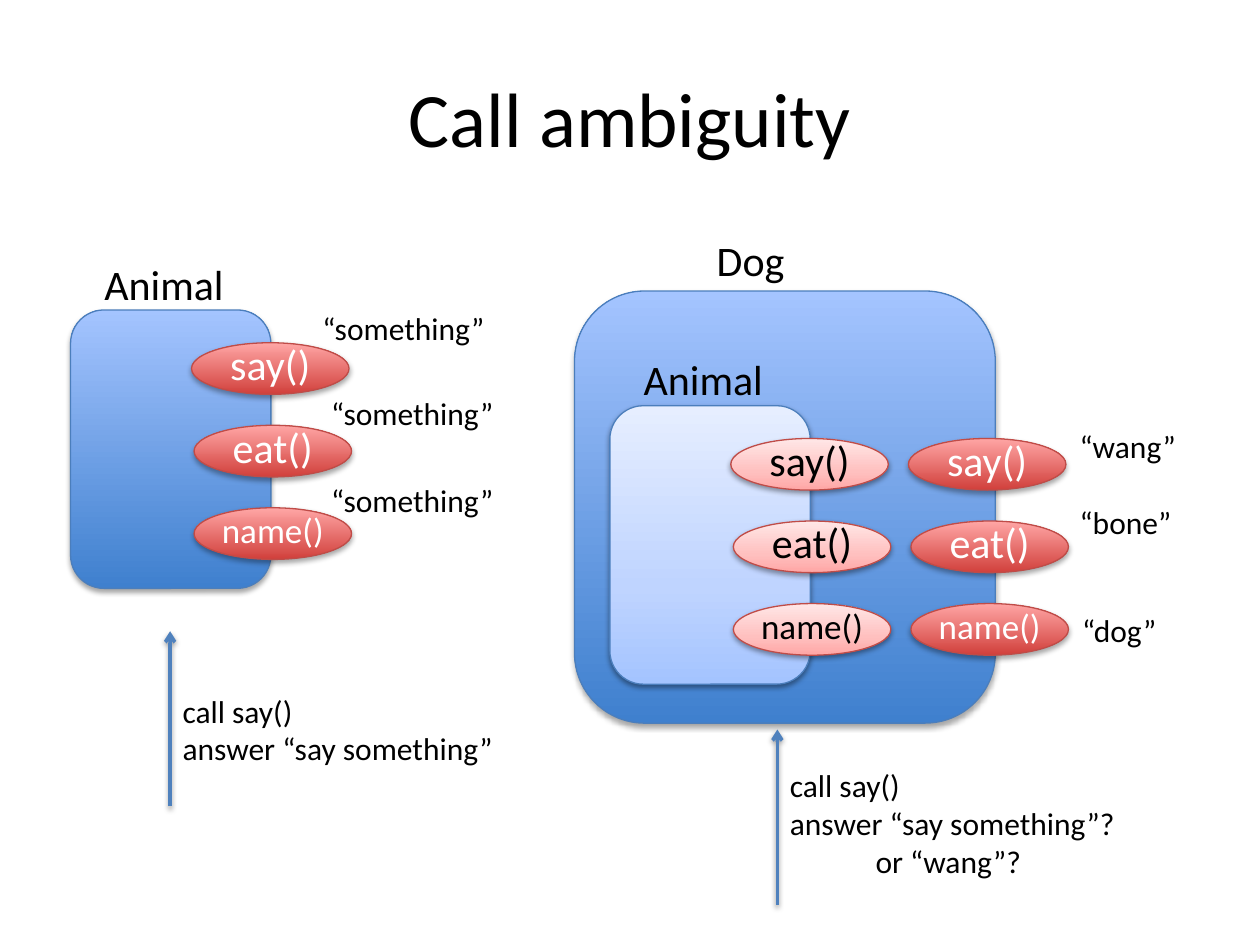
from dataclasses import dataclass

from lxml import etree
from pptx import Presentation
from pptx.dml.color import RGBColor
from pptx.enum.shapes import MSO_CONNECTOR, MSO_SHAPE
from pptx.enum.text import MSO_ANCHOR, MSO_AUTO_SIZE, PP_ALIGN
from pptx.oxml.ns import qn
from pptx.util import Inches, Pt

ROUND = MSO_SHAPE.ROUNDED_RECTANGLE
OVAL = MSO_SHAPE.OVAL
STRAIGHT = MSO_CONNECTOR.STRAIGHT
MIDDLE = MSO_ANCHOR.MIDDLE
CENTER = PP_ALIGN.CENTER
GROW = MSO_AUTO_SIZE.SHAPE_TO_FIT_TEXT


@dataclass(frozen=True)
class Tone:
    stops: tuple  # (percent, colour), from bottom to top
    line: str
    text: str
    alpha: int
    drop: float


@dataclass(frozen=True)
class Theme:
    font: str = "Calibri"
    ink: str = "000000"
    arrow: str = "4F81BD"
    title: int = 44
    label: int = 24
    small: int = 20
    note: int = 18
    blue: Tone = Tone(((0, "3F80CE"), (100, "A4C4FF")),
                      "4B7EBC", "FFFFFF", 35, 1.8)
    pale: Tone = Tone(((0, "A4C4FF"), (35, "BFD4FF"), (100, "E6EEFF")),
                      "4B7EBC", "000000", 38, 1.6)
    red: Tone = Tone(((0, "D1403C"), (100, "FFA6A5")),
                     "BF4C48", "FFFFFF", 35, 1.8)
    pink: Tone = Tone(((0, "FFA6A5"), (35, "FFC0BF"), (100, "FFE7E7")),
                      "BF4C48", "000000", 38, 1.6)


THEME = Theme()


def node(parent, tag, **attrs):
    item = etree.SubElement(parent, qn(tag))
    for key, value in attrs.items():
        item.set(key, str(value))
    return item


def add_shadow(props, alpha, drop):
    effects = node(props, "a:effectLst")
    outer = node(effects, "a:outerShdw", blurRad=Pt(3.1), dist=Pt(drop),
                 dir=90 * 60000, rotWithShape=0)
    color = node(outer, "a:srgbClr", val=THEME.ink)
    node(color, "a:alpha", val=alpha * 1000)


def add_fill(props, stops):
    """Fill with a gradient that runs upwards."""
    grad = etree.Element(qn("a:gradFill"), rotWithShape="1")
    group = node(grad, "a:gsLst")
    for place, color in stops:
        stop = node(group, "a:gs", pos=place * 1000)
        node(stop, "a:srgbClr", val=color)
    node(grad, "a:lin", ang=270 * 60000, scaled=0)
    props.find(qn("a:ln")).addprevious(grad)


def add_run(para, text, size, color=THEME.ink):
    run = para.add_run()
    run.text = text
    run.font.name = THEME.font
    run.font.size = Pt(size)
    run.font.color.rgb = RGBColor.from_string(color)


def add_body(slide, kind, left, top, width, height, tone):
    shape = slide.shapes.add_shape(
        kind, Inches(left), Inches(top), Inches(width), Inches(height))
    shape.line.color.rgb = RGBColor.from_string(tone.line)
    shape.line.width = Pt(0.75)
    props = shape._element.spPr
    add_fill(props, tone.stops)
    add_shadow(props, tone.alpha, tone.drop)
    return shape


def add_calls(slide, left, top, tone):
    """Stack the three method ovals of one class."""
    rows = (("say()", 0, THEME.label), ("eat()", 0.02, THEME.label),
            ("name()", 0.02, THEME.small))
    for i, (name, shift, size) in enumerate(rows):
        oval = add_body(slide, OVAL, left + shift, top + i * 1.31 / 2,
                        1.25, 0.41, tone)
        frame = oval.text_frame
        frame.vertical_anchor = MIDDLE
        if size == THEME.small:
            frame.margin_left = frame.margin_right = 0
        para = frame.paragraphs[0]
        para.alignment = CENTER
        para.line_spacing = 0.8
        add_run(para, name, size, tone.text)


def add_text(slide, left, top, width, height, lines, size):
    box = slide.shapes.add_textbox(
        Inches(left), Inches(top), Inches(width), Inches(height))
    frame = box.text_frame
    frame.word_wrap = False
    frame.auto_size = GROW
    for i, line in enumerate(lines):
        para = frame.add_paragraph() if i else frame.paragraphs[0]
        add_run(para, line, size)
    return frame


def add_arrow(slide, x, top):
    arrow = slide.shapes.add_connector(
        STRAIGHT, Inches(x), Inches(top + 1.39), Inches(x), Inches(top))
    arrow.line.color.rgb = RGBColor.from_string(THEME.arrow)
    arrow.line.width = Pt(2)
    props = arrow._element.spPr
    node(props.find(qn("a:ln")), "a:tailEnd", type="arrow")
    add_shadow(props, THEME.pale.alpha, THEME.pale.drop)


def add_title(slide, text):
    title = slide.shapes.title
    title.left, title.top = Inches(0.5), Inches(0.3)
    title.width, title.height = Inches(9), Inches(1.25)
    title.text_frame.vertical_anchor = MIDDLE
    para = title.text_frame.paragraphs[0]
    para.alignment = CENTER
    add_run(para, text, THEME.title)


def add_animal(slide, left, top, body, calls):
    add_body(slide, ROUND, left, top, 1.59, 2.21, body)
    add_text(slide, left + 0.17, top - 0.46, 1.16, 0.5, ["Animal"],
             THEME.label)
    add_calls(slide, left + 0.96, top + 0.26, calls)


def main():
    deck = Presentation()
    deck.slide_width, deck.slide_height = Inches(10), Inches(7.5)
    slide = deck.slides.add_slide(deck.slide_layouts[5])
    add_title(slide, "Call ambiguity")

    add_body(slide, ROUND, 4.56, 2.31, 3.34, 3.43, THEME.blue)
    add_text(slide, 5.59, 1.81, 0.74, 0.5, ["Dog"], THEME.label)
    add_animal(slide, 0.56, 2.46, THEME.blue, THEME.red)
    add_animal(slide, 4.84, 3.22, THEME.pale, THEME.pink)
    add_calls(slide, 7.21, 3.48, THEME.red)

    answers = (
        (2.46, 2.4, 1.5, "“something”"),
        (2.53, 3.08, 1.5, "“something”"),
        (2.53, 3.77, 1.5, "“something”"),
        (8.47, 3.34, 0.97, "“wang”"),
        (8.47, 3.94, 0.94, "“bone”"),
        (8.49, 4.8, 0.8, "“dog”"),
    )
    for left, top, width, text in answers:
        add_text(slide, left, top, width, 0.4, [text], THEME.note)

    add_arrow(slide, 1.35, 5.01)
    add_text(slide, 1.35, 5.44, 2.69, 0.71,
             ["call say()", "answer “say something”"], THEME.note)
    add_arrow(slide, 6.17, 5.79)
    frame = add_text(slide, 6.17, 6.03, 2.81, 1.01,
                     ["call say()", "answer “say something”?",
                      "or “wang”?"], THEME.note)
    indent = frame.paragraphs[-1]._p.get_or_add_pPr()
    indent.set("marL", str(Inches(0.68)))

    deck.save("out.pptx")


if __name__ == "__main__":
    main()
